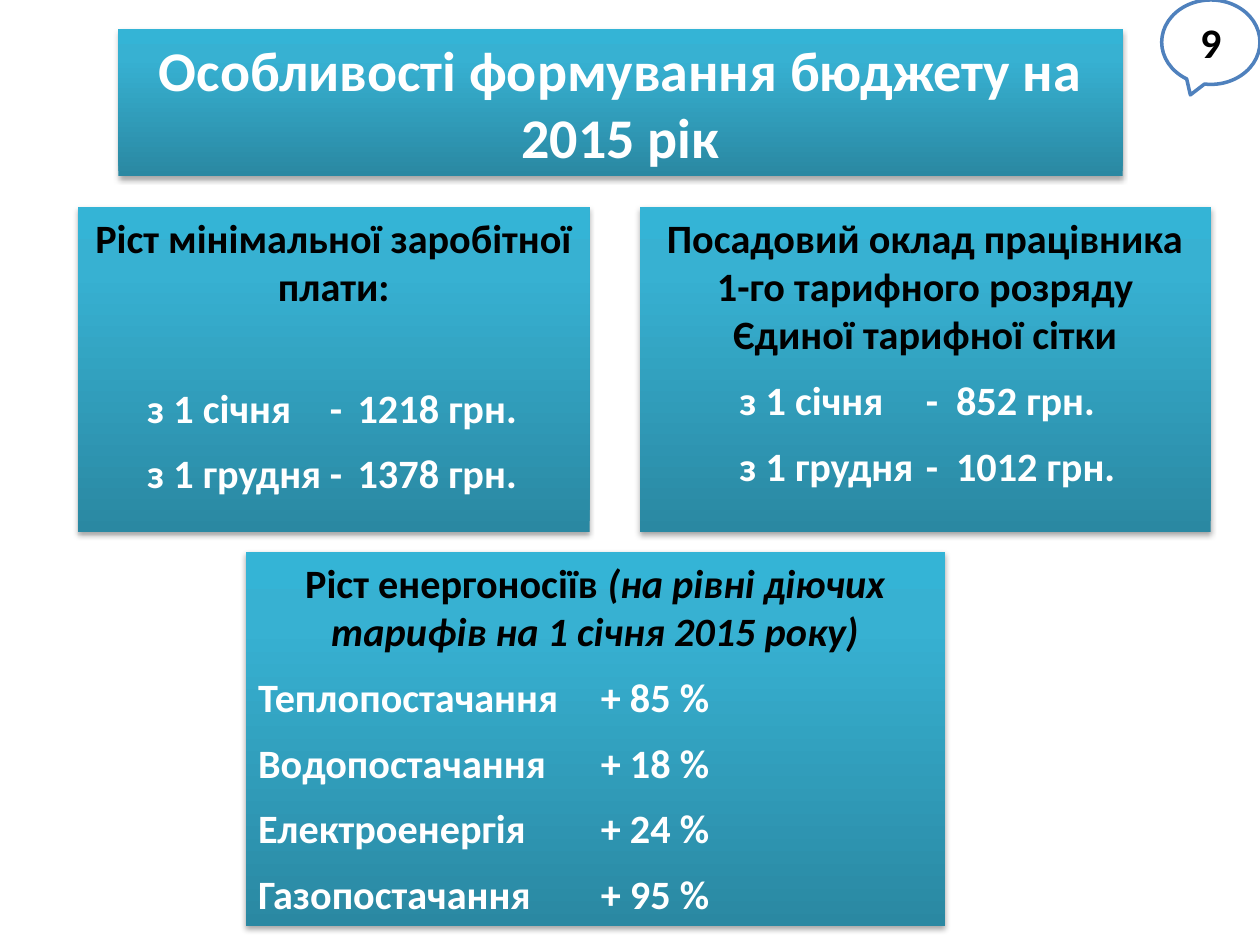
from dataclasses import dataclass

import pptx
import pptx.dml.color
import pptx.enum.shapes
import pptx.enum.text
import pptx.oxml
import pptx.oxml.ns
import pptx.util

Inches = pptx.util.Inches
Align = pptx.enum.text.PP_ALIGN
Anchor = pptx.enum.text.MSO_ANCHOR
ShapeType = pptx.enum.shapes.MSO_SHAPE

COLORS = {"white": "FFFFFF", "black": "000000", "outline": "4F81BD"}
GRADIENT = ((0, "2A88A2"), (80, "37B1D2"), (100, "34B4D6"))
NAMESPACE = pptx.oxml.ns.nsdecls("a")


@dataclass
class Line:
    """One paragraph; runs are pairs of text and italic."""
    runs: tuple[tuple[str, bool], ...]
    color: str = "white"
    size: float = 23
    align: Align = Align.CENTER
    space_after: float = 10
    tabs: tuple[float, ...] = ()


@dataclass
class Panel:
    left: float
    top: float
    width: float
    height: float
    lines: list[Line]


def rgb(name: str) -> pptx.dml.color.RGBColor:
    return pptx.dml.color.RGBColor.from_string(COLORS[name])


def add_text(paragraph, text: str, *, size: float, color: str, italic: bool = False) -> None:
    run = paragraph.add_run()
    run.text = text
    run.font.name = "Calibri"
    run.font.size = pptx.util.Pt(size)
    run.font.bold = True
    run.font.italic = italic
    run.font.color.rgb = rgb(color)


def add_line(paragraph, line: Line) -> None:
    paragraph.alignment = line.align
    paragraph.space_after = pptx.util.Pt(line.space_after)
    for text, italic in line.runs:
        add_text(paragraph, text, size=line.size, color=line.color, italic=italic)
    if line.tabs:
        stops = "".join(f'<a:tab pos="{Inches(tab)}" algn="l"/>' for tab in line.tabs)
        paragraph._p.get_or_add_pPr().append(
            pptx.oxml.parse_xml(f"<a:tabLst {NAMESPACE}>{stops}</a:tabLst>"))


def add_panel_style(shape) -> None:
    """Three-stop gradient, no outline, soft shadow below."""
    shape.fill.gradient()
    shape.fill.gradient_angle = 90
    shape.line.fill.background()
    shape.shadow.inherit = False
    properties = shape._element.spPr
    stops = "".join(f'<a:gs pos="{position * 1000}"><a:srgbClr val="{color}"/></a:gs>'
                    for position, color in GRADIENT)
    old_stops = properties.find(".//" + pptx.oxml.ns.qn("a:gsLst"))
    old_stops.getparent().replace(
        old_stops, pptx.oxml.parse_xml(f"<a:gsLst {NAMESPACE}>{stops}</a:gsLst>"))
    properties.find(pptx.oxml.ns.qn("a:effectLst")).append(pptx.oxml.parse_xml(
        f'<a:outerShdw {NAMESPACE} blurRad="{pptx.util.Pt(3.1)}" dist="{pptx.util.Pt(1.8)}" '
        'dir="5400000" rotWithShape="0"><a:srgbClr val="000000">'
        '<a:alpha val="35000"/></a:srgbClr></a:outerShdw>'))


def add_panel(slide, panel: Panel) -> None:
    shape = slide.shapes.add_shape(
        ShapeType.RECTANGLE, Inches(panel.left), Inches(panel.top),
        Inches(panel.width), Inches(panel.height))
    add_panel_style(shape)
    frame = shape.text_frame
    frame.word_wrap = True
    frame.vertical_anchor = Anchor.TOP
    for index, line in enumerate(panel.lines):
        paragraph = frame.add_paragraph() if index else frame.paragraphs[0]
        add_line(paragraph, line)


def add_page_number(slide, number: str) -> None:
    shape = slide.shapes.add_shape(
        ShapeType.OVAL_CALLOUT, Inches(9.22), 0, Inches(0.78), Inches(0.67))
    shape.shadow.inherit = False
    shape.fill.solid()
    shape.fill.fore_color.rgb = rgb("white")
    shape.line.color.rgb = rgb("outline")
    shape.line.width = pptx.util.Pt(2)
    shape.text_frame.vertical_anchor = Anchor.MIDDLE
    paragraph = shape.text_frame.paragraphs[0]
    paragraph.alignment = Align.CENTER
    add_text(paragraph, number, size=24, color="black")


def heading(text: str, italic_text: str = "", space_after: float = 10) -> Line:
    runs = ((text, False), (italic_text, True)) if italic_text else ((text, False),)
    return Line(runs, color="black", space_after=space_after)


def pay_lines(january: str, december: str, tabs: tuple[float, ...]) -> list[Line]:
    """Date, dash and amount, each at its own tab stop."""
    rows = (("з 1 січня", january), ("з 1 грудня", december))
    return [Line(((f"\t{date}\t-\t{amount} грн.", False),), align=Align.LEFT, tabs=tabs)
            for date, amount in rows]


def tariff_lines(rises: dict[str, int]) -> list[Line]:
    return [Line(((f"{service}\t+ {rise} %", False),), align=Align.LEFT, tabs=(2.72,))
            for service, rise in rises.items()]


ROW_TOP, ROW_HEIGHT = 1.64, 2.58
PANELS = [
    # Title
    Panel(0.94, 0.23, 7.97, 1.17,
          [Line((("Особливості формування бюджету на 2015 рік", False),), size=32)]),
    # Minimum wage
    Panel(0.62, ROW_TOP, 4.06, ROW_HEIGHT,
          [heading("Ріст мінімальної заробітної плати:", space_after=42),
           *pay_lines("1218", "1378", (0.45, 1.9, 2.12))]),
    # First-grade salary
    Panel(5.08, ROW_TOP, 4.53, ROW_HEIGHT,
          [heading("Посадовий оклад працівника 1-го тарифного розряду Єдиної тарифної сітки"),
           *pay_lines("852", "1012", (0.69, 2.17, 2.41))]),
    # Energy tariffs
    Panel(1.95, 4.38, 5.55, 2.97,
          [heading("Ріст енергоносіїв ", "(на рівні діючих тарифів на 1 січня 2015 року)"),
           *tariff_lines({"Теплопостачання": 85, "Водопостачання": 18,
                          "Електроенергія": 24, "Газопостачання": 95})]),
]


def main() -> None:
    presentation = pptx.Presentation()
    presentation.slide_width = Inches(10)
    presentation.slide_height = Inches(7.5)
    slide = presentation.slides.add_slide(presentation.slide_layouts[6])
    for panel in PANELS:
        add_panel(slide, panel)
    add_page_number(slide, "9")
    presentation.save("out.pptx")


if __name__ == "__main__":
    main()
